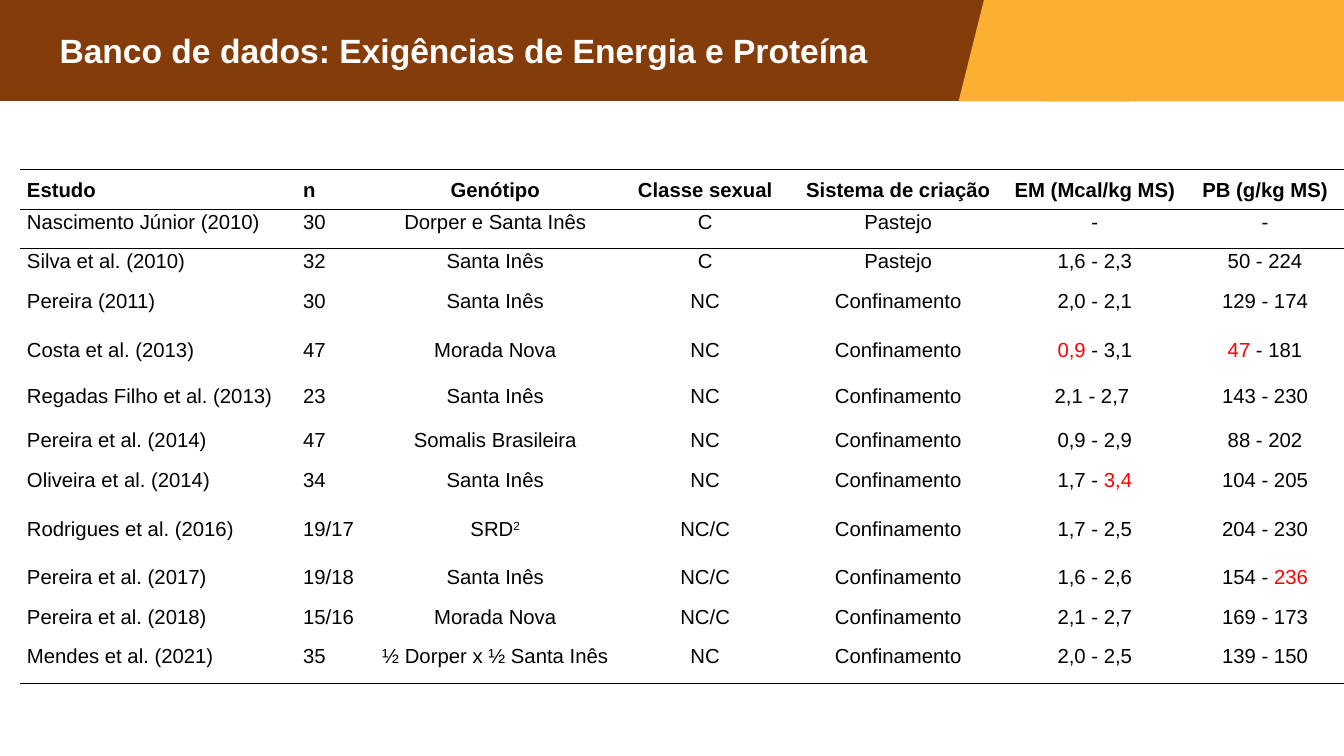
from lxml import etree
from pptx import Presentation
from pptx.dml.color import RGBColor
from pptx.enum.shapes import MSO_SHAPE
from pptx.enum.text import MSO_ANCHOR, MSO_AUTO_SIZE, PP_ALIGN
from pptx.oxml.ns import qn
from pptx.util import Cm, Pt

LEFT, CENTER, JUSTIFY = PP_ALIGN.LEFT, PP_ALIGN.CENTER, PP_ALIGN.JUSTIFY
MIDDLE, TOP = MSO_ANCHOR.MIDDLE, MSO_ANCHOR.TOP
NO_AUTOFIT = MSO_AUTO_SIZE.NONE
PENTAGON, PARALLELOGRAM = MSO_SHAPE.PENTAGON, MSO_SHAPE.PARALLELOGRAM
BROWN, AMBER, BLACK, RED, WHITE = "843C0B", "FBB031", "000000", "FF0000", "FFFFFF"
NO_TABLE_STYLE = "{2D5ABB26-0587-4C30-8999-92F81FD0307C}"

COLUMN_WIDTHS = [6.96, 1.93, 6.18, 4.4, 5.33, 4.58, 4]
ROW_HEIGHTS = [1.5, 1, 1, 1, 1.22, 1.17, 1.12, 1, 1.24, 1.2, 1, 1, 1]
ALIGNMENTS = [LEFT, JUSTIFY] + [CENTER] * 5

# "|" separates runs, "!" marks an extreme value, "^" a superscript
STUDIES = [
    ["Estudo", "n", "Genótipo", "Classe sexual", "Sistema de criação", "EM (Mcal/kg MS)", "PB (g/kg MS)"],
    ["Nascimento Júnior (2010)", "30", "Dorper e Santa Inês", "C", "Pastejo", "-", "-"],
    ["Silva et al. (2010)", "32", "Santa Inês", "C", "Pastejo", "1,6 - 2,3", "50 - 224"],
    ["Pereira (2011)", "30", "Santa Inês", "NC", "Confinamento", "2,0 - 2,1", "129 - 174"],
    ["Costa et al. (2013)", "47", "Morada Nova", "NC", "Confinamento", "!0,9 |- 3,1", "!47| - 181"],
    ["Regadas Filho et al. (2013)", "23", "Santa Inês", "NC", "Confinamento", "2,1 - 2,7 ", "143 - 230"],
    ["Pereira et al. (2014)", "47", "Somalis Brasileira", "NC", "Confinamento", "0,9 - 2,9", "88 - 202"],
    ["Oliveira et al. (2014)", "34", "Santa Inês", "NC", "Confinamento", "1,7 - |!3,4", "104 - 205"],
    ["Rodrigues et al. (2016)", "19/17", "SRD|^2", "NC/C", "Confinamento", "1,7 - 2,5", "204 - 230"],
    ["Pereira et al. (2017)", "19/18", "Santa Inês", "NC/C", "Confinamento", "1,6 - 2,6", "154 - |!236"],
    ["Pereira et al. (2018)", "15/16", "Morada Nova", "NC/C", "Confinamento", "2,1 - 2,7", "169 - 173"],
    ["Mendes et al. (2021)", "35", "½ Dorper x ½ Santa Inês", "NC", "Confinamento", "2,0 - 2,5", "139 - 150"],
]
BORDERS = {0: ["lnB"], 1: ["lnT", "lnB"], 2: ["lnT"], len(STUDIES): ["lnB"]}


def rgb(color):
    return RGBColor.from_string(color)


def add_border(cell, side):
    line = etree.SubElement(cell._tc.get_or_add_tcPr(), qn("a:" + side), w=str(Pt(1)))
    fill = etree.SubElement(line, qn("a:solidFill"))
    etree.SubElement(fill, qn("a:srgbClr"), val=BLACK)


prs = Presentation()
prs.slide_width, prs.slide_height = Cm(33.87), Cm(19.05)
slide = prs.slides.add_slide(prs.slide_layouts[5])

title = slide.shapes.title
title.left, title.top, title.width, title.height = Cm(0), Cm(0), Cm(33.87), Cm(2.54)
title.fill.solid()
title.fill.fore_color.rgb = rgb(BROWN)
title.line.color.rgb = rgb(BROWN)
title.line.width = Pt(1)
title_frame = title.text_frame
title_frame.text = "Banco de dados: Exigências de Energia e Proteína"
title_frame.auto_size = NO_AUTOFIT
title_frame.vertical_anchor = MIDDLE
title_frame.margin_left = Cm(1.5)
title_frame.paragraphs[0].alignment = LEFT
title_font = title_frame.paragraphs[0].runs[0].font
title_font.name, title_font.size, title_font.bold = "Arial", Pt(24), True
title_font.color.rgb = rgb(WHITE)

for outline, left, width in [(PENTAGON, 25.05, 8.82), (PARALLELOGRAM, 24.18, 4.93)]:
    accent = slide.shapes.add_shape(outline, Cm(left), Cm(0), Cm(width), Cm(2.54))
    accent.shadow.inherit = False
    accent.fill.solid()
    accent.fill.fore_color.rgb = rgb(AMBER)
    accent.line.color.rgb = rgb(AMBER)
    accent.line.width = Pt(1)
    if outline == PENTAGON:
        accent._element.spPr.xfrm.set("flipH", "1")

studies_frame = slide.shapes.add_table(
    len(ROW_HEIGHTS), len(COLUMN_WIDTHS), Cm(0.5), Cm(2.77),
    Cm(sum(COLUMN_WIDTHS)), Cm(sum(ROW_HEIGHTS)))
studies_table = studies_frame.table
studies_table.first_row = studies_table.horz_banding = False
studies_table._tbl.tblPr.find(qn("a:tableStyleId")).text = NO_TABLE_STYLE
for column, width in zip(studies_table.columns, COLUMN_WIDTHS):
    column.width = Cm(width)
for row_index, (row, height) in enumerate(zip(studies_table.rows, ROW_HEIGHTS)):
    row.height = Cm(height)
    for cell in row.cells:
        for side in BORDERS.get(row_index, []):
            add_border(cell, side)
        cell.fill.background()
studies_table.cell(0, 0).merge(studies_table.cell(0, 5))

for row_index, study in enumerate(STUDIES, start=1):
    is_header = row_index == 1
    for column_index, entry in enumerate(study):
        cell = studies_table.cell(row_index, column_index)
        cell.margin_left = cell.margin_right = Cm(0.18)
        cell.margin_top = cell.margin_bottom = Cm(0)
        cell.vertical_anchor = MIDDLE if is_header else TOP
        paragraph = cell.text_frame.paragraphs[0]
        paragraph.alignment = LEFT if is_header and column_index == 1 else ALIGNMENTS[column_index]
        paragraph.line_spacing = 1.07
        paragraph.space_after = Pt(8)
        for part in entry.split("|"):
            run = paragraph.add_run()
            run.text = part.lstrip("!^")
            run.font.name, run.font.size, run.font.bold = "Arial", Pt(14.5), is_header
            run.font.color.rgb = rgb(RED if part.startswith("!") else BLACK)
            if part.startswith("^"):
                run._r.get_or_add_rPr().set("baseline", "30000")

prs.save("out.pptx")
